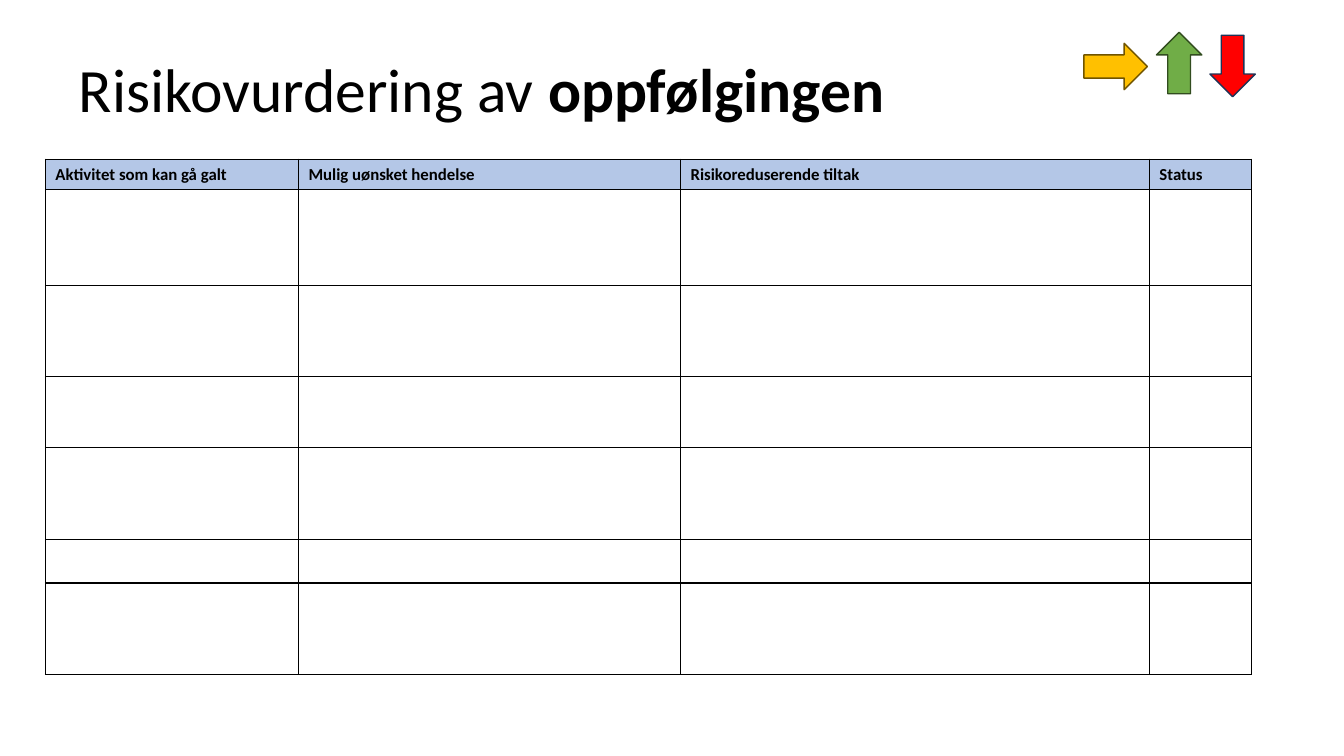
from lxml import etree
from pptx import Presentation
from pptx.dml.color import RGBColor
from pptx.enum.shapes import MSO_SHAPE as Preset
from pptx.enum.text import MSO_ANCHOR as Anchor, PP_ALIGN as Align
from pptx.oxml import parse_xml
from pptx.util import Inches, Pt

DRAWING = "http://schemas.openxmlformats.org/drawingml/2006/main"


def color(value):
    return RGBColor.from_string(value)


def add_borders(cell, value, points):
    properties = cell._tc.get_or_add_tcPr()
    for position, side in enumerate(("lnL", "lnR", "lnT", "lnB")):
        properties.insert(position, parse_xml(
            f'<a:{side} xmlns:a="{DRAWING}" w="{Pt(points)}">'
            f'<a:solidFill><a:srgbClr val="{value}"/></a:solidFill></a:{side}>'))


presentation = Presentation()
presentation.slide_width = Inches(13.33)
presentation.slide_height = Inches(7.5)
slide = presentation.slides.add_slide(presentation.slide_layouts[5])

title = slide.shapes.title
title.left, title.top = Inches(0.68), Inches(0.19)
title.width, title.height = Inches(11.5), Inches(1.45)
title.text_frame.vertical_anchor = Anchor.MIDDLE
paragraph = title.text_frame.paragraphs[0]
paragraph.alignment = Align.LEFT
paragraph.line_spacing = 0.9
for text, bold in (("Risikovurdering av ", False), ("oppfølgingen", True)):
    run = paragraph.add_run()
    run.text = text
    run.font.name = "Calibri"
    run.font.size = Pt(44)
    run.font.bold = bold
    run.font.color.rgb = color("000000")

headings = ["Aktivitet som kan gå galt", "Mulig uønsket hendelse",
            "Risikoreduserende tiltak", "Status"]
column_widths = [2.51, 3.79, 4.65, 1.01]
row_heights = [0.3, 0.95, 0.9, 0.71, 0.91, 0.43, 0.91]
table = slide.shapes.add_table(
    len(row_heights), len(column_widths), Inches(0.45), Inches(1.58),
    Inches(sum(column_widths)), Inches(sum(row_heights))).table
table.first_row = False
table.horz_banding = False
for column, width in zip(table.columns, column_widths):
    column.width = Inches(width)
for row, height in zip(table.rows, row_heights):
    row.height = Inches(height)
for cell in table.iter_cells():
    cell.fill.background()
    add_borders(cell, "000000", 1)
for cell, heading in zip(table.rows[0].cells, headings):
    cell.fill.solid()
    cell.fill.fore_color.rgb = color("B4C7E7")
    cell.text_frame.text = heading
    font = cell.text_frame.paragraphs[0].runs[0].font
    font.name = "Calibri"
    font.size = Pt(12)
    font.bold = True
    font.color.rgb = color("000000")

status_arrows = [
    (Preset.RIGHT_ARROW, 10.75, 0.43, 0.63, 0.46, "FFC000", "705400"),
    (Preset.DOWN_ARROW, 12, 0.35, 0.45, 0.61, "FF0000", "1E3256"),
    (Preset.UP_ARROW, 11.47, 0.32, 0.45, 0.61, "70AD47", "314C1F"),
]
for preset, left, top, width, height, fill, line in status_arrows:
    arrow = slide.shapes.add_shape(
        preset, Inches(left), Inches(top), Inches(width), Inches(height))
    arrow.shadow.inherit = False
    arrow.fill.solid()
    arrow.fill.fore_color.rgb = color(fill)
    arrow.line.color.rgb = color(line)
    arrow.line.width = Pt(1)

presentation.save("out.pptx")
